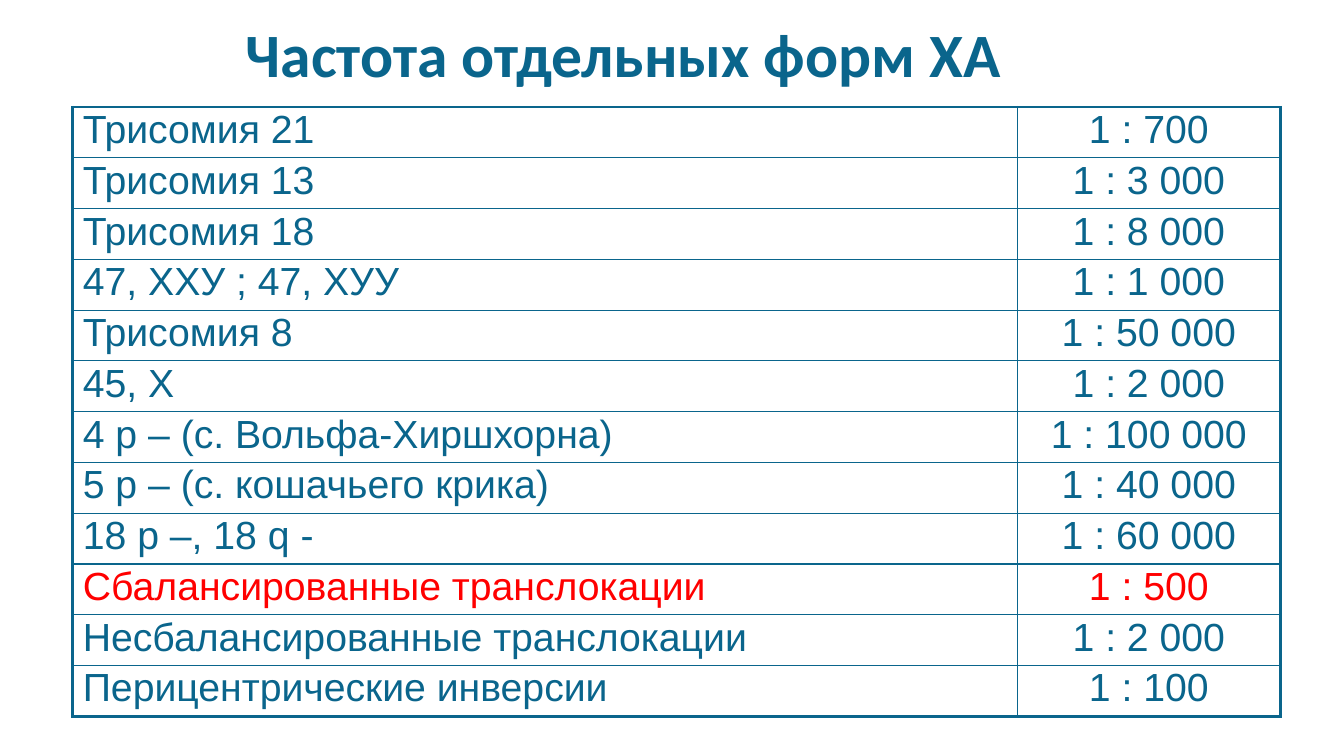
from dataclasses import dataclass

from lxml import etree
from pptx import Presentation
from pptx import util as u
from pptx.dml.color import RGBColor
from pptx.enum import text
from pptx.oxml import ns


@dataclass(frozen=True)
class Theme:
    main: str = "0A658C"
    accent: str = "FF0000"
    title_font: str = "Calibri"
    body_font: str = "Arial"
    title_size: float = 44
    body_size: float = 28
    outer_line: float = 2.25
    inner_line: float = 1


THEME = Theme()
COLUMN_WIDTHS = (674.6, 188)
ROW_HEIGHT = 35.3
HIGHLIGHTED = "Сбалансированные транслокации"
FREQUENCIES = (
    ("Трисомия 21", "1 : 700"),
    ("Трисомия 13", "1 : 3 000"),
    ("Трисомия 18", "1 : 8 000"),
    ("47, ХХУ ; 47, ХУУ", "1 : 1 000"),
    ("Трисомия 8", "1 : 50 000"),
    ("45, Х", "1 : 2 000"),
    ("4 р – (с. Вольфа-Хиршхорна)", "1 : 100 000"),
    ("5 р – (с. кошачьего крика)", "1 : 40 000"),
    ("18 р –, 18 q -", "1 : 60 000"),
    (HIGHLIGHTED, "1 : 500"),
    ("Несбалансированные транслокации", "1 : 2 000"),
    ("Перицентрические инверсии", "1 : 100"),
)


def set_values(target, values):
    for name, value in values.items():
        setattr(target, name, value)


def write_text(frame, wording, color, font, alignment=text.PP_ALIGN.LEFT):
    paragraph = frame.paragraphs[0]
    set_values(paragraph, {"alignment": alignment, "line_spacing": 0.9})
    run = paragraph.add_run()
    run.text = wording
    set_values(run.font, font)
    run.font.color.rgb = RGBColor.from_string(color)


def add_title(slide, wording):
    box = slide.shapes.add_textbox(u.Pt(168.5), u.Pt(14.4), u.Pt(720), u.Pt(54))
    set_values(box.text_frame, {
        "word_wrap": True,
        "vertical_anchor": text.MSO_ANCHOR.MIDDLE,
    })
    write_text(box.text_frame, wording, THEME.main, {
        "name": THEME.title_font, "size": u.Pt(THEME.title_size), "bold": True,
    })


def set_borders(cell, outer_edges):
    properties = cell._tc.get_or_add_tcPr()
    for position, (side, is_outer) in enumerate(outer_edges.items()):
        width = THEME.outer_line if is_outer else THEME.inner_line
        line = etree.Element(ns.qn(f"a:ln{side}"), w=str(u.Pt(width)))
        fill = etree.SubElement(line, ns.qn("a:solidFill"))
        etree.SubElement(fill, ns.qn("a:srgbClr"), val=THEME.main)
        properties.insert(position, line)


def add_frequency_table(slide, rows):
    last_row, last_column = len(rows) - 1, len(COLUMN_WIDTHS) - 1
    table = slide.shapes.add_table(
        len(rows), len(COLUMN_WIDTHS), u.Pt(52), u.Pt(76.5),
        u.Pt(sum(COLUMN_WIDTHS)), u.Pt(ROW_HEIGHT * len(rows)),
    ).table
    set_values(table, {"first_row": False, "horz_banding": False})
    for column, width in zip(table.columns, COLUMN_WIDTHS):
        column.width = u.Pt(width)
    font = {"name": THEME.body_font, "size": u.Pt(THEME.body_size)}
    alignments = (text.PP_ALIGN.LEFT, text.PP_ALIGN.CENTER)
    for i, row in enumerate(rows):
        table.rows[i].height = u.Pt(ROW_HEIGHT)
        color = THEME.accent if row[0] == HIGHLIGHTED else THEME.main
        for j, wording in enumerate(row):
            cell = table.cell(i, j)
            set_values(cell, {
                "margin_top": u.Pt(3.6),
                "margin_bottom": u.Pt(2.4),
                "vertical_anchor": text.MSO_ANCHOR.TOP,
            })
            cell.fill.background()
            write_text(cell.text_frame, wording, color, font, alignments[j])
            set_borders(cell, {
                "L": j == 0, "R": j == last_column,
                "T": i == 0, "B": i == last_row,
            })


def main():
    presentation = Presentation()
    set_values(presentation, {"slide_width": u.Pt(960), "slide_height": u.Pt(540)})
    slide = presentation.slides.add_slide(presentation.slide_layouts[6])
    add_title(slide, "Частота отдельных форм ХА")
    add_frequency_table(slide, FREQUENCIES)
    presentation.save("out.pptx")


if __name__ == "__main__":
    main()
